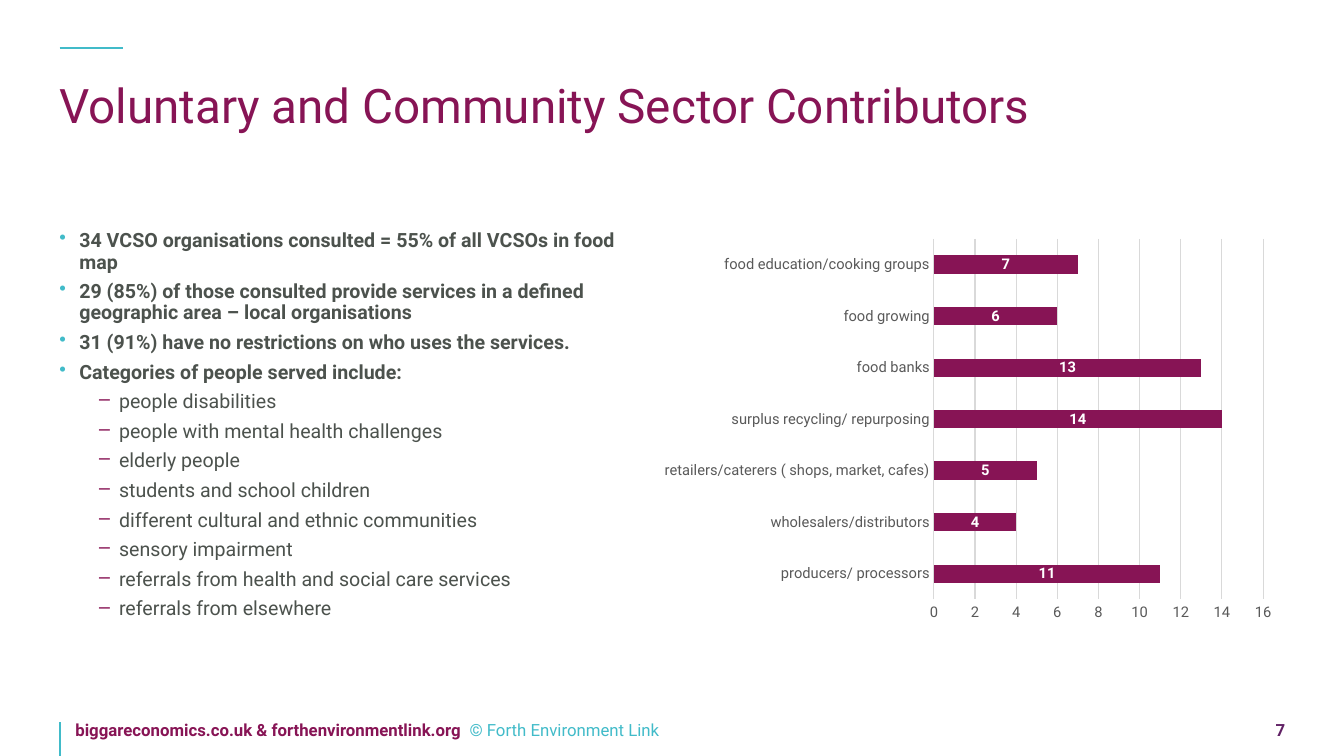
from lxml import etree
from pptx import Presentation
from pptx import util as u
from pptx.chart import data as chart_data
from pptx.dml.color import RGBColor
from pptx.enum import chart as charts, shapes, text
from pptx.oxml import ns

PLUM = RGBColor(0x87, 0x14, 0x55)
TEAL = RGBColor(0x41, 0xBB, 0xC9)
PURPLE = RGBColor(0x61, 0x21, 0x65)
SLATE = RGBColor(0x4C, 0x52, 0x4D)
AXIS_GREY = RGBColor(0x59, 0x59, 0x59)
GRID_GREY = RGBColor(0xD9, 0xD9, 0xD9)
BLACK = RGBColor(0, 0, 0)
WHITE = RGBColor(0xFF, 0xFF, 0xFF)

deck = Presentation()
deck.slide_width, deck.slide_height = u.Cm(33.87), u.Cm(19.05)
page = deck.slides.add_slide(deck.slide_layouts[6])


def style(font, color, **formats):
    for name, value in {"name": "Roboto", **formats}.items():
        setattr(font, name, value)
    font.color.rgb = color


def add_frame(left, top, width, height):
    box = page.shapes.add_textbox(u.Cm(left), u.Cm(top), u.Cm(width), u.Cm(height))
    frame = box.text_frame
    margins = dict.fromkeys(("margin_left", "margin_top", "margin_right", "margin_bottom"), 0)
    for name, value in {"word_wrap": True, **margins}.items():
        setattr(frame, name, value)
    return frame


# Accent lines above the title and beside the footer
for x1, y1, x2, y2 in [(1.5, 1.22, 3.1, 1.22), (1.5, 19.05, 1.5, 18.2)]:
    line = page.shapes.add_connector(
        shapes.MSO_CONNECTOR.STRAIGHT, u.Cm(x1), u.Cm(y1), u.Cm(x2), u.Cm(y2))
    line.line.color.rgb = TEAL
    line.line.width = u.Pt(1.42)
    etree.SubElement(line.element.spPr, ns.qn("a:effectLst"))

# Title
para = add_frame(1.5, 2.08, 30.86, 2.95).paragraphs[0]
para.line_spacing = 0.9
para.text = "Voluntary and Community Sector Contributors"
style(para.font, PLUM, size=u.Pt(34))

# Findings, then the groups of people served
findings = [
    "34 VCSO organisations consulted = 55% of all VCSOs in food map",
    "29 (85%) of those consulted provide services in a defined geographic area – local organisations",
    "31 (91%) have no restrictions on who uses the services.",
    "Categories of people served include:",
]
people = [
    "people disabilities",
    "people with mental health challenges",
    "elderly people",
    "students and school children",
    "different cultural and ethnic communities",
    "sensory impairment",
    "referrals from health and social care services",
    "referrals from elsewhere",
]
# Items, outline level, indent in cm, bullet, bullet colour, bold
levels = [
    (findings, 1, 0.5, "•", TEAL, True),
    (people, 3, 1.5, "–", PLUM, False),
]
frame = add_frame(1.5, 5.82, 14.27, 10.54)
para = frame.paragraphs[0]
for items, level, indent, bullet, bullet_color, bold in levels:
    for item in items:
        if para.text:
            para = frame.add_paragraph()
        para.text = item
        para.level = level
        para.line_spacing = 0.9
        para.space_after = u.Pt(6)
        props = para._p.get_or_add_pPr()
        props.set("marL", str(u.Cm(indent)))
        props.set("indent", str(u.Cm(-0.5)))
        color_mark = etree.SubElement(props, ns.qn("a:buClr"))
        etree.SubElement(color_mark, ns.qn("a:srgbClr"), val=str(bullet_color))
        etree.SubElement(props, ns.qn("a:buChar"), char=bullet)
        style(para.font, SLATE, size=u.Pt(14), bold=bold)

# Chart of organisations by activity
activities = {
    "producers/ processors": 11,
    "wholesalers/distributors": 4,
    "retailers/caterers ( shops, market, cafes)": 5,
    "surplus recycling/ repurposing": 14,
    "food banks": 13,
    "food growing": 6,
    "food education/cooking groups": 7,
}
numbers = chart_data.CategoryChartData()
numbers.categories = list(activities)
numbers.add_series("Series 1", list(activities.values()))
chart = page.shapes.add_chart(
    charts.XL_CHART_TYPE.BAR_CLUSTERED,
    u.Cm(16.43), u.Cm(5.82), u.Cm(15.93), u.Cm(10.01), numbers).chart
chart.has_legend = chart.has_title = False
style(chart.font, BLACK, size=u.Pt(10.5))

plot = chart.plots[0]
plot.gap_width = 182
plot.vary_by_categories = False
series = plot.series[0]
series.format.fill.solid()
series.format.fill.fore_color.rgb = PLUM
labels = series.data_labels
labels.show_value = True
labels.position = charts.XL_LABEL_POSITION.CENTER
style(labels.font, WHITE, size=u.Pt(10.5), bold=True)

for axis in (chart.category_axis, chart.value_axis):
    axis.major_tick_mark = axis.minor_tick_mark = charts.XL_TICK_MARK.NONE
    style(axis.tick_labels.font, AXIS_GREY, size=u.Pt(10.5))
chart.category_axis.has_major_gridlines = False
chart.value_axis.has_major_gridlines = True
chart.value_axis.format.line.fill.background()
for rule in (chart.category_axis, chart.value_axis.major_gridlines):
    rule.format.line.color.rgb = GRID_GREY
    rule.format.line.width = u.Pt(0.75)

# Footer and page number
para = add_frame(1.9, 18.14, 16.69, 0.91).paragraphs[0]
for words, color, bold in [
    ("biggareconomics.co.uk & forthenvironmentlink.org ", PLUM, True),
    (" © Forth Environment Link", TEAL, False),
]:
    span = para.add_run()
    span.text = words
    style(span.font, color, size=u.Pt(12), bold=bold)

para = add_frame(31.65, 18.14, 0.74, 0.61).paragraphs[0]
para.text = "7"
para.alignment = text.PP_ALIGN.RIGHT
style(para.font, PURPLE, size=u.Pt(12), bold=True)

deck.save("out.pptx")
